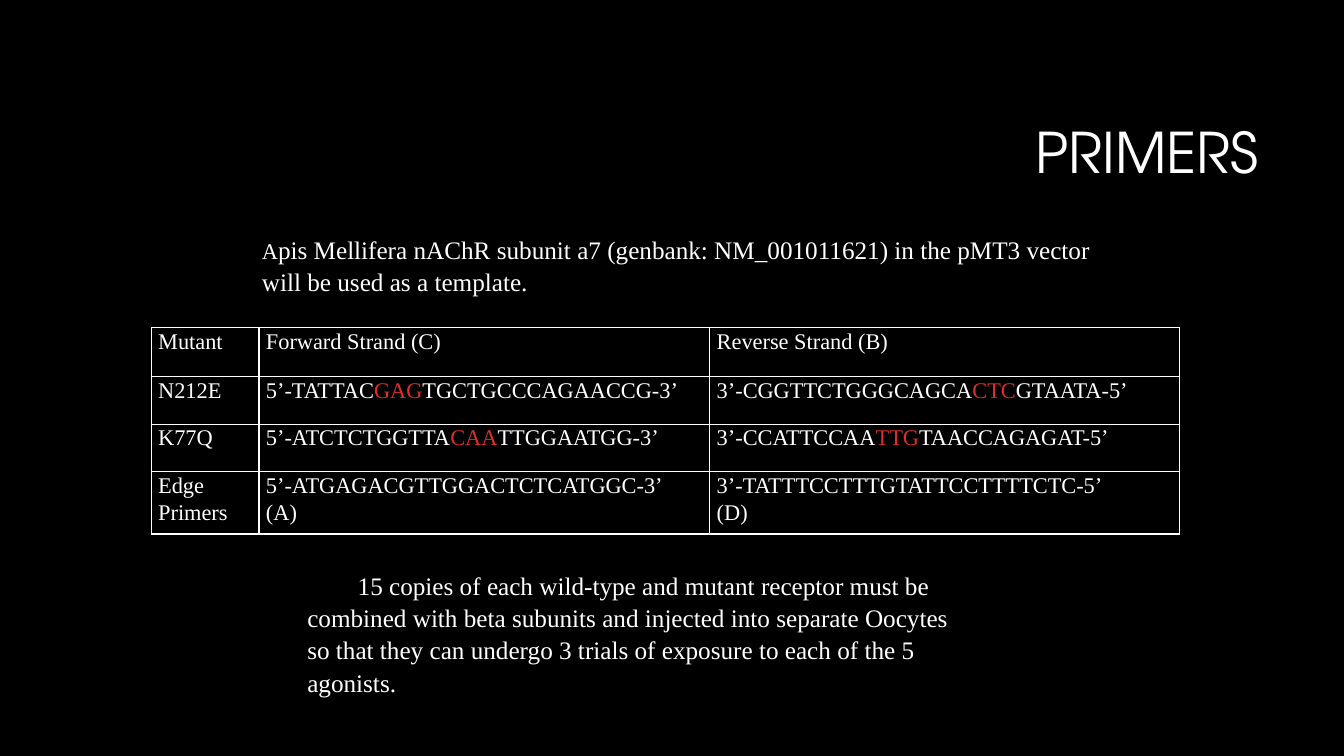
import dataclasses

import lxml.etree
import pptx
import pptx.dml.color
import pptx.enum.text
import pptx.oxml.ns
import pptx.util

Pt = pptx.util.Pt
RGB = pptx.dml.color.RGBColor.from_string
ALIGN = pptx.enum.text.PP_ALIGN
ANCHOR = pptx.enum.text.MSO_ANCHOR


@dataclasses.dataclass
class Theme:
    back: str = "000000"
    ink: str = "FFFFFF"
    codon: str = "DF2E28"
    heading: str = "TeX Gyre Adventor"
    body: str = "Times New Roman"
    title_size: int = 40
    text_size: int = 18
    table_size: int = 16


class Deck:
    def __init__(self, prs, theme):
        self.theme = theme
        self.s = prs.slides.add_slide(prs.slide_layouts[5])
        fill = self.s.background.fill
        fill.solid()
        fill.fore_color.rgb = RGB(theme.back)

    def run(self, p, text, size, font=None, color=None):
        r = p.add_run()
        r.text = text
        style = {"size": Pt(size), "name": font or self.theme.body}
        for key, value in style.items():
            setattr(r.font, key, value)
        r.font.color.rgb = RGB(color or self.theme.ink)

    def format(self, obj, **values):
        for key, value in values.items():
            setattr(obj, key, value)

    def title(self, text, left, top, width, height):
        sp = self.s.shapes.title
        self.format(sp, left=Pt(left), top=Pt(top), width=Pt(width), height=Pt(height))
        self.format(sp.text_frame, vertical_anchor=ANCHOR.MIDDLE, word_wrap=True)
        p = sp.text_frame.paragraphs[0]
        self.format(p, alignment=ALIGN.RIGHT, line_spacing=0.9)
        self.run(p, text, self.theme.title_size, self.theme.heading)

    def text(self, runs, left, top, width, height, margin=0, indent=0, level=0):
        tf = self.s.shapes.add_textbox(Pt(left), Pt(top), Pt(width), Pt(height)).text_frame
        tf.word_wrap = True
        p = tf.paragraphs[0]
        self.format(p, level=level, line_spacing=1.07, space_after=Pt(8))
        pPr = p._p.get_or_add_pPr()
        pPr.set("marL", str(Pt(margin)))
        pPr.set("indent", str(Pt(indent)))
        for text, size in runs:
            self.run(p, text, size)

    def border(self, cell):
        tcPr = cell._tc.get_or_add_tcPr()
        for side in ("a:lnL", "a:lnR", "a:lnT", "a:lnB"):
            ln = lxml.etree.SubElement(tcPr, pptx.oxml.ns.qn(side), w=str(Pt(1)))
            fill = lxml.etree.SubElement(ln, pptx.oxml.ns.qn("a:solidFill"))
            lxml.etree.SubElement(fill, pptx.oxml.ns.qn("a:srgbClr"), val=self.theme.ink)

    def cell(self, cell, text):
        self.border(cell)
        cell.fill.background()
        self.format(cell, margin_left=Pt(5), margin_right=Pt(5), margin_top=0, margin_bottom=0)
        for i, line in enumerate(text.split("\n")):
            tf = cell.text_frame
            p = tf.add_paragraph() if i else tf.paragraphs[0]
            p.line_spacing = 1.07
            # Every second part between bars is the mutated codon
            for j, part in enumerate(line.split("|")):
                color = self.theme.codon if j % 2 else self.theme.ink
                self.run(p, part, self.theme.table_size, color=color)

    def table(self, rows, left, top, widths, heights):
        table = self.s.shapes.add_table(
            len(rows), len(widths), Pt(left), Pt(top), Pt(sum(widths)), Pt(sum(heights))).table
        self.format(table, first_row=False, horz_banding=False)
        for column, width in zip(table.columns, widths):
            column.width = Pt(width)
        for r, (row, height) in enumerate(zip(rows, heights)):
            table.rows[r].height = Pt(height)
            for c, text in enumerate(row):
                self.cell(table.cell(r, c), text)


PRIMERS = [
    ["Mutant", "Forward Strand (C)", "Reverse Strand (B)"],
    ["N212E", "5’-TATTAC|GAG|TGCTGCCCAGAACCG-3’", "3’-CGGTTCTGGGCAGCA|CTC|GTAATA-5’"],
    ["K77Q", "5’-ATCTCTGGTTA|CAA|TTGGAATGG-3’", "3’-CCATTCCAA|TTG|TAACCAGAGAT-5’"],
    ["Edge Primers", "5’-ATGAGACGTTGGACTCTCATGGC-3’\n(A)", "3’-TATTTCCTTTGTATTCCTTTTCTC-5’\n(D)"],
]


def main():
    prs = pptx.Presentation()
    prs.slide_width, prs.slide_height = Pt(960), Pt(540)
    theme = Theme()
    deck = Deck(prs, theme)

    # Heading
    deck.title("PRIMERS", 228, 60.5, 678, 101.5)

    # Primer sequences
    deck.table(PRIMERS, 108, 234, [77, 322, 335.5], [35, 34, 34, 44.5])

    # Template note
    deck.text([("A", theme.table_size),
               ("pis Mellifera nAChR subunit a7 (genbank: NM_001011621) in the pMT3 vector "
                "will be used as a template.", theme.text_size)],
              108, 162, 689, 52.5, margin=72, level=2)

    # Injection plan
    deck.text([("15 copies of each wild-type and mutant receptor must be combined with beta "
                "subunits and injected into separate Oocytes so that they can undergo 3 trials "
                "of exposure to each of the 5 agonists.", theme.text_size)],
              212.4, 402, 480, 101, indent=36)

    prs.save("out.pptx")


if __name__ == "__main__":
    main()
